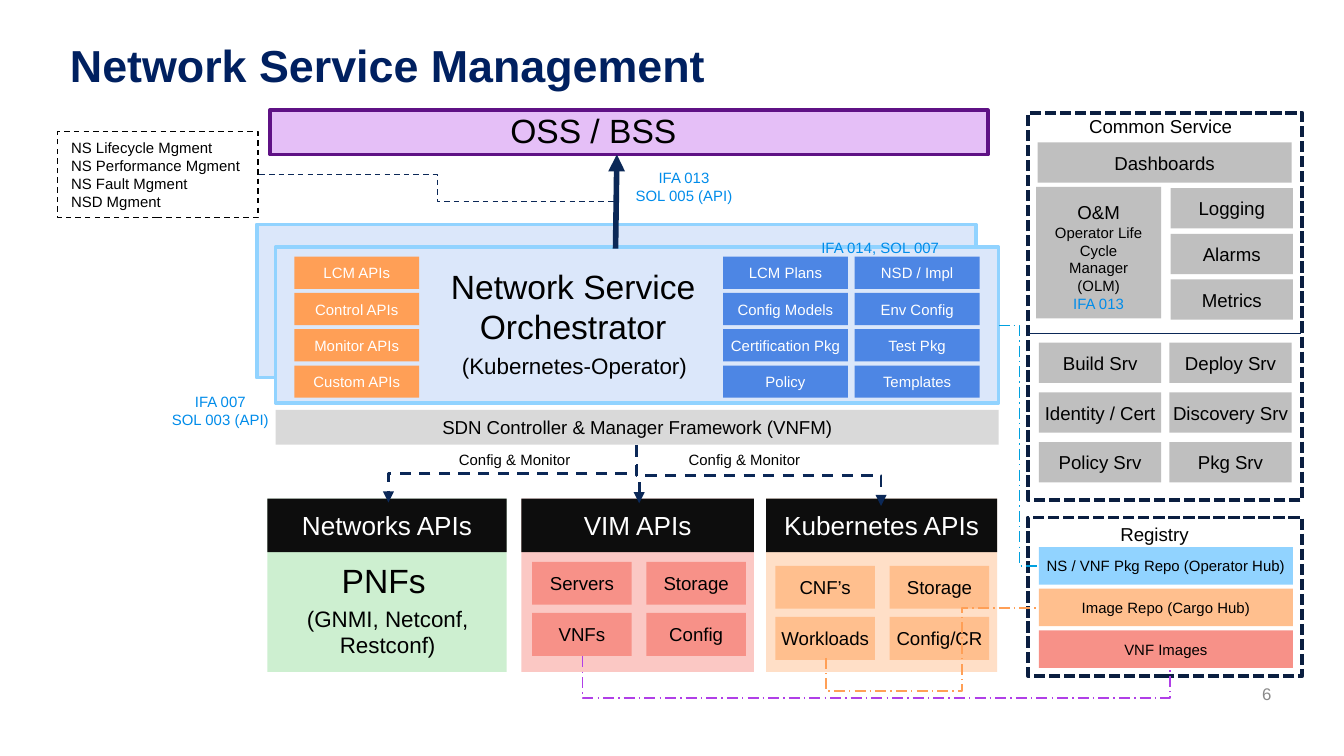
from lxml.etree import SubElement
from pptx import Presentation
from pptx.dml.color import RGBColor
from pptx.enum.dml import MSO_LINE
from pptx.enum.shapes import MSO_CONNECTOR, MSO_SHAPE
from pptx.enum.text import MSO_ANCHOR, PP_ALIGN
from pptx.oxml.ns import qn
from pptx.util import Pt

PX = 9144  # 100 px to the inch


class Theme:
    font = "Arial"
    tiny, page, small, mid, head, large, title = 8, 9, 10, 12, 14, 18, 24
    black, white, ink, gray = "000000", "FFFFFF", "0D0D0D", "BFBFBF"
    navy, frame, name, note = "0B2857", "0A1E40", "002060", "008CEA"
    pale, sky, blue, cyan = "DBE7FA", "91D3FF", "4D86E4", "00A1DF"
    lilac, plum, violet = "E5BFF7", "5F1185", "B03FE7"
    orange, peach, cream = "FF9F56", "FFBF8E", "FFDFC7"
    coral, pink, mint, silver, dim = "F79188", "FBC8C4", "CDEFD0", "D9D9D9", "898989"


T = Theme
LEFT, MID, RIGHT = PP_ALIGN.LEFT, PP_ALIGN.CENTER, PP_ALIGN.RIGHT
DASH, DOT, LONG = MSO_LINE.DASH, MSO_LINE.SQUARE_DOT, MSO_LINE.LONG_DASH_DOT

deck = Presentation()
deck.slide_width = 1000 * PX
deck.slide_height = deck.slide_width * 9 // 16
slide = deck.slides.add_slide(deck.slide_layouts[6])
shapes = slide.shapes


def write(shape, text, size, color=T.black, align=MID):
    frame = shape.text_frame
    frame.word_wrap = True
    frame.vertical_anchor = MSO_ANCHOR.MIDDLE
    frame.margin_left = frame.margin_right = 0
    frame.margin_top = frame.margin_bottom = 0
    frame.text = text
    for para in frame.paragraphs:
        para.alignment = align
        para.font.name = T.font
        para.font.size = Pt(size)
        para.font.color.rgb = RGBColor.from_string(color)
    return frame


def box(x, y, w, h, fill=None, line=None, width=2, dash=None):
    shape = shapes.add_shape(MSO_SHAPE.RECTANGLE, x * PX, y * PX, w * PX, h * PX)
    shape.shadow.inherit = False
    if fill:
        shape.fill.solid()
        shape.fill.fore_color.rgb = RGBColor.from_string(fill)
    else:
        shape.fill.background()
    if line:
        shape.line.color.rgb = RGBColor.from_string(line)
        shape.line.width = Pt(width)
        shape.line.dash_style = dash
    else:
        shape.line.fill.background()
    return shape


# Layers of the stack
box(191, 167, 535, 114, T.pale, T.sky)
box(205, 184, 538, 116, T.pale, T.sky)
box(201, 82, 534, 33, T.lilac, T.plum)
write(box(205, 305, 538, 26, T.silver),
      "SDN Controller & Manager Framework (VNFM)", T.small)

jobs = box(43, 98, 149, 64, None, T.black, 0.75, DASH)
frame = write(jobs, "NS Lifecycle Mgment\nNS Performance Mgment\nNS Fault Mgment\nNSD Mgment",
              T.tiny, align=LEFT)
frame.margin_left = 10 * PX

# Buttons inside the orchestrator
columns = [
    (219, T.orange, ["LCM APIs", "Control APIs", "Monitor APIs", "Custom APIs"]),
    (538, T.blue, ["LCM Plans", "Config Models", "Certification Pkg", "Policy"]),
    (636, T.blue, ["NSD / Impl", "Env Config", "Test Pkg", "Templates"]),
]
for x, fill, names in columns:
    for row, text in enumerate(names):
        write(box(x, 191 + 27 * row, 93, 24, fill), text, T.tiny, T.white)

# API panels
panels = [
    (199, 178, T.mint, "Networks APIs"),
    (388, 173, T.pink, "VIM APIs"),
    (570, 172, T.cream, "Kubernetes APIs"),
]
for x, w, fill, text in panels:
    box(x, 371, w, 129, fill)
    write(box(x, 371, w, 40, T.ink), text, T.head, T.white)

cells = [
    (396, 418, T.coral, ["Servers", "Storage", "VNFs", "Config"]),
    (577, 421, T.peach, ["CNF’s", "Storage", "Workloads", "Config/CR"]),
]
for x, y, fill, names in cells:
    for i, text in enumerate(names):
        write(box(x + i % 2 * 85, y + i // 2 * 38, 74, 32, fill), text, T.small)

# Common services
box(765, 84, 204, 288, None, T.frame, 2, DOT)
write(box(772, 106, 189, 30, T.gray), "Dashboards", T.small)
frame = write(box(771, 139, 93, 98, T.gray),
              "O&M\nOperator Life Cycle Manager (OLM)\nIFA 013", T.tiny)
frame.margin_left = frame.margin_right = 11 * PX
frame.margin_top = 6 * PX
frame.paragraphs[0].font.size = Pt(T.small)
frame.paragraphs[2].font.color.rgb = RGBColor.from_string(T.note)
for row, text in enumerate(["Logging", "Alarms", "Metrics"]):
    write(box(871, 140 + 34 * row, 91, 30, T.gray), text, T.small)
tools = ["Build Srv", "Deploy Srv", "Identity / Cert", "Discovery Srv",
         "Policy Srv", "Pkg Srv"]
for i, text in enumerate(tools):
    write(box(773 + i % 2 * 97, 255 + i // 2 * 37, 91, 30, T.gray), text, T.small)

box(765, 385, 204, 118, None, T.frame, 2, DOT)

# Wires: frame before turning, turn, flips, preset, bends, line, arrow
wires = [
    (193, 130, 265, 20, 0, "", "bentConnector3", [0.5], T.navy, 0.75, DASH, False),
    (458, 115, 1, 70, 0, "V", "line", [], T.navy, 3, None, True),
    (765, 248, 203, 0, 0, "", "line", [], T.navy, 0.75, None, False),
    (360, 260, 43, 185, 90, "", "bentConnector3", [0.5], T.navy, 1.5, DASH, True),
    (542, 263, 45, 182, 270, "H", "bentConnector3", [0.5], T.navy, 1.5, DASH, True),
    (453, 352, 43, 2, 270, "H", "bentConnector3", [0.5], T.navy, 1.5, DASH, True),
    (743, 242, 31, 179, 0, "", "bentConnector3", [0.5], T.cyan, 0.75, LONG, False),
    (675, 392, 37, 158, 90, "HV", "bentConnector4", [-0.67, 0.64], T.orange, 0.75, LONG, False),
    (649, 273, 6, 437, 270, "H", "bentConnector3", [5.15], T.violet, 0.75, LONG, False),
]
for x, y, w, h, turn, flips, preset, bends, color, width, dash, arrow in wires:
    kind = MSO_CONNECTOR.ELBOW if bends else MSO_CONNECTOR.STRAIGHT
    wire = shapes.add_connector(kind, x * PX, y * PX, (x + w) * PX, (y + h) * PX)
    wire.line.color.rgb = RGBColor.from_string(color)
    wire.line.width = Pt(width)
    wire.line.dash_style = dash
    props = wire.element.spPr
    xfrm = props.find(qn("a:xfrm"))
    xfrm.set("rot", str(turn * 60000))
    for flip in flips:
        xfrm.set("flip" + flip, "1")
    geom = props.find(qn("a:prstGeom"))
    geom.set("prst", preset)
    for i, bend in enumerate(bends, 1):
        SubElement(geom.find(qn("a:avLst")), qn("a:gd"), name=f"adj{i}",
                   fmla=f"val {round(bend * 100000)}")
    if arrow:
        SubElement(props.find(qn("a:ln")), qn("a:tailEnd"), type="triangle")
    SubElement(props, qn("a:effectLst"))

# Registry
repos = [
    (T.sky, "NS / VNF Pkg Repo (Operator Hub)"),
    (T.peach, "Image Repo (Cargo Hub)"),
    (T.coral, "VNF Images"),
]
for row, (fill, text) in enumerate(repos):
    write(box(773, 407 + 31 * row, 189, 28, fill), text, T.tiny)

# Free labels
labels = [
    (369, 77, 145, 40, "OSS / BSS", T.large, T.black, MID),
    (321, 192, 211, 71, "Network Service\nOrchestrator", T.large, T.black, MID),
    (333, 257, 189, 30, "(Kubernetes-Operator)", T.mid, T.black, MID),
    (330, 330, 106, 24, "Config & Monitor", T.tiny, T.black, MID),
    (501, 330, 106, 24, "Config & Monitor", T.tiny, T.black, MID),
    (244, 412, 83, 40, "PNFs", T.large, T.black, MID),
    (216, 445, 145, 50, "(GNMI, Netconf, Restconf)", T.mid, T.black, MID),
    (800, 80, 127, 27, "Common Service", T.small, T.black, MID),
    (823, 384, 72, 27, "Registry", T.small, T.black, MID),
    (602, 172, 106, 24, "IFA 014, SOL 007", T.tiny, T.note, MID),
    (117, 287, 94, 37, "IFA 007\nSOL 003 (API)", T.tiny, T.note, MID),
    (462, 120, 94, 37, "IFA 013\nSOL 005 (API)", T.tiny, T.note, MID),
    (932, 505, 14, 22, "6", T.page, T.dim, RIGHT),
    (52, 1, 859, 94, "Network Service Management", T.title, T.name, LEFT),
]
for x, y, w, h, text, size, color, align in labels:
    label = shapes.add_textbox(x * PX, y * PX, w * PX, h * PX)
    frame = write(label, text, size, color, align)
frame.paragraphs[0].font.bold = True

deck.save("out.pptx")
